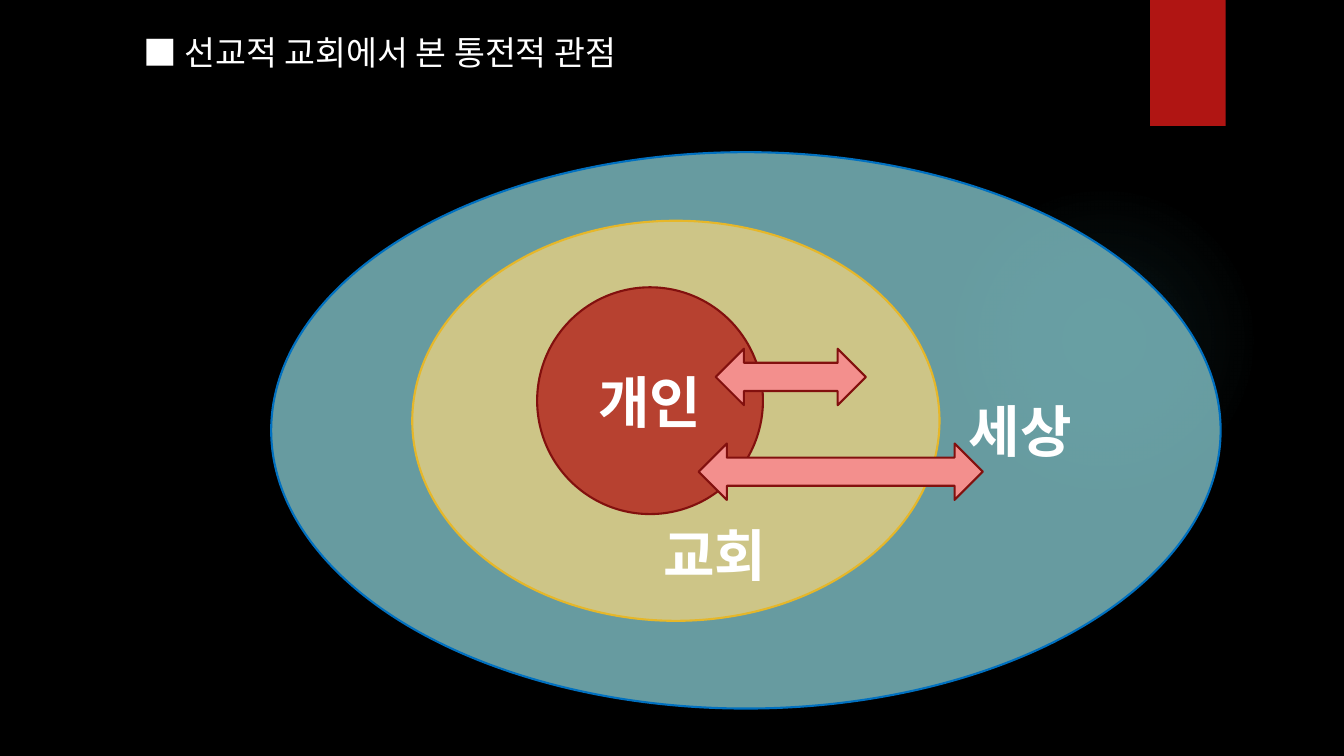
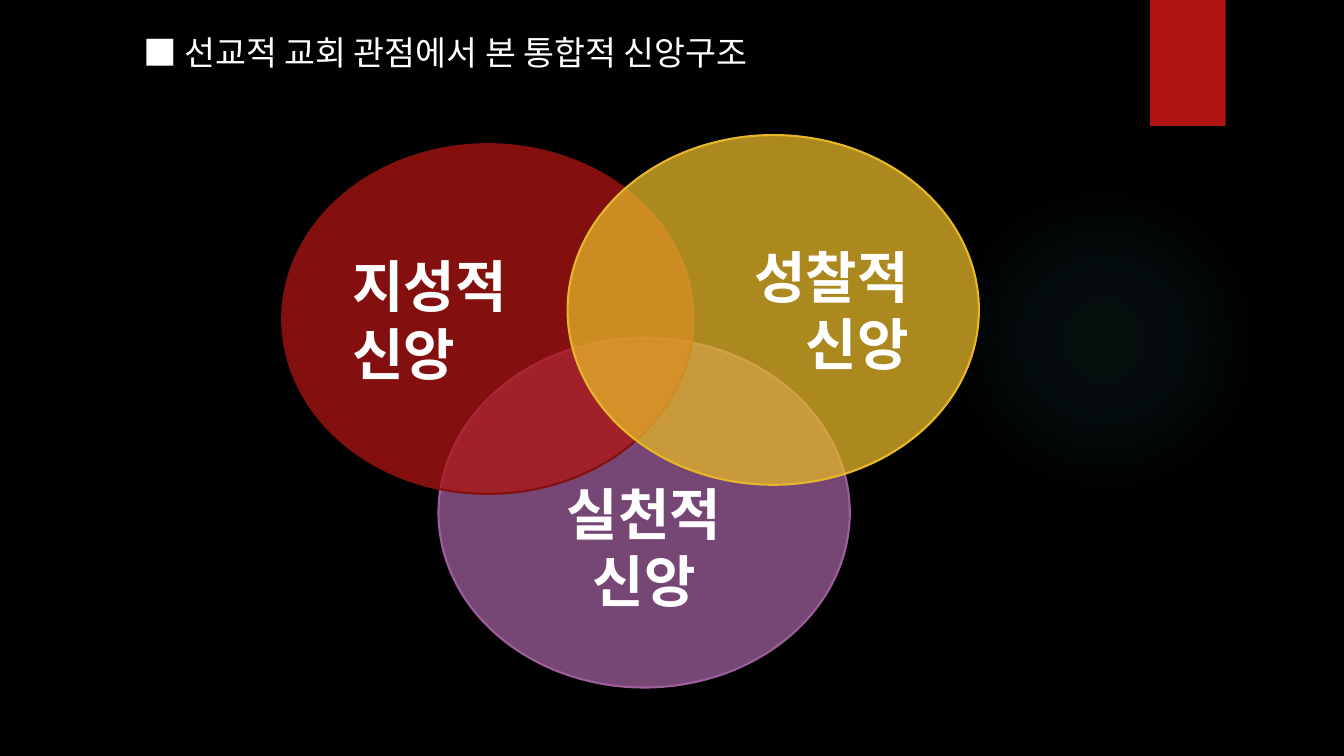
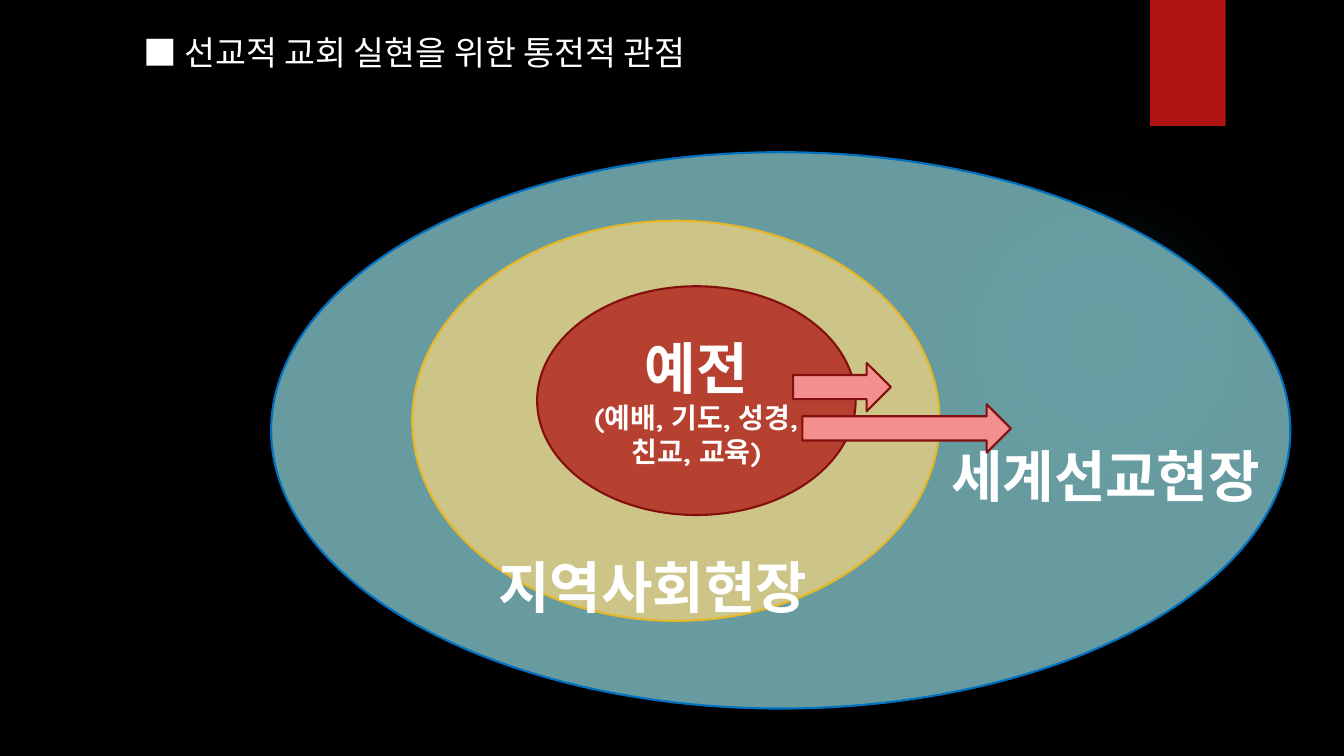
from pptx import Presentation
from pptx.dml.color import RGBColor
from pptx.enum.shapes import MSO_SHAPE as Shape
from pptx.enum.text import MSO_ANCHOR as Anchor, MSO_AUTO_SIZE as AutoSize, PP_ALIGN as Align
from pptx.oxml import parse_xml
from pptx.oxml.ns import nsdecls, qn
from pptx.util import Pt

COLORS = {
    "background": "000000", "text": "FFFFFF", "glow": "50B9C1",
    "red": "B01513", "dark_red": "82100E", "arrow": "F38F8D",
    "teal": "8AD0D6", "blue": "0070C0", "cream": "F0D47F",
    "gold": "E6B729", "purple": "9E5E9B",
}
FONT = "Quicksand"
LABEL_SIZE = 40
LINE_HEIGHT = 48
GLOW_STOPS = [(0, 7), (36, 6), (69, 0)]


def color(name):
    """Return the named colour."""
    return RGBColor.from_string(COLORS[name])


def write(frame, lines, align=Align.LEFT, bold=True):
    """Write (text, size) lines as the paragraphs of a text frame."""
    for index, (text, size) in enumerate(lines):
        paragraph = frame.add_paragraph() if index else frame.paragraphs[0]
        paragraph.alignment = align
        run = paragraph.add_run()
        run.text = text
        run.font.name = FONT
        run.font.size = Pt(size)
        run.font.bold = bold
        run.font.color.rgb = color("text")


def add_figure(slide, kind, box, fill, line=None, opacity=100):
    """Add a flat preset shape, optionally outlined and see-through."""
    shape = slide.shapes.add_shape(kind, *map(Pt, box))
    shape.shadow.inherit = False
    shape.fill.solid()
    shape.fill.fore_color.rgb = color(fill)
    if opacity < 100:
        solid = shape.element.spPr.find(qn("a:solidFill"))
        solid[0].append(parse_xml(f'<a:alpha {nsdecls("a")} val="{opacity * 1000}"/>'))
    if line:
        shape.line.color.rgb = color(line)
        shape.line.width = Pt(1.5)
    else:
        shape.line.fill.background()
    return shape


def add_ellipse(slide, box, fill, line, lines=(), align=Align.CENTER, drop=0):
    """Add a translucent ellipse whose text sits a given drop below its top inset."""
    shape = add_figure(slide, Shape.OVAL, box, fill, line, 75)
    frame = shape.text_frame
    frame.word_wrap = True
    frame.vertical_anchor = Anchor.MIDDLE
    frame.margin_top = Pt(3.6 + drop)
    write(frame, lines, align)


def add_label(slide, center, text):
    """Add a bold one-line label centred on a point."""
    width, height = LABEL_SIZE * len(text), LINE_HEIGHT
    box = center[0] - width / 2, center[1] - height / 2, width, height
    frame = slide.shapes.add_textbox(*map(Pt, box)).text_frame
    frame.word_wrap = False
    frame.vertical_anchor = Anchor.MIDDLE
    frame.margin_left = frame.margin_right = frame.margin_top = frame.margin_bottom = 0
    write(frame, [(text, LABEL_SIZE)], Align.CENTER)


def decorate_layout(layout, slide):
    """Draw the glow and the red tab and move them to the shared layout."""
    glow = add_figure(slide, Shape.OVAL, (677.5, 131.8, 221.8, 221.8), "glow")
    stops = "".join(
        f'<a:gs pos="{position * 1000}"><a:srgbClr val="{COLORS["glow"]}">'
        f'<a:alpha val="{opacity * 1000}"/></a:srgbClr></a:gs>'
        for position, opacity in GLOW_STOPS)
    gradient = parse_xml(
        f'<a:gradFill {nsdecls("a")}><a:gsLst>{stops}</a:gsLst><a:path path="circle">'
        '<a:fillToRect l="50000" t="50000" r="50000" b="50000"/></a:path></a:gradFill>')
    properties = glow.element.spPr
    properties.replace(properties.find(qn("a:solidFill")), gradient)
    tab = add_figure(slide, Shape.RECTANGLE, (821.5, 0, 54, 90), "red")
    for shape in (glow, tab):
        layout.shapes.element.append(shape.element)


def add_titled_slide(presentation, layout, title, width):
    """Add a slide with its heading in the title placeholder."""
    slide = presentation.slides.add_slide(layout)
    shape = slide.shapes.title
    shape.left, shape.top, shape.width, shape.height = map(Pt, (95, 19.4, width, 36))
    frame = shape.text_frame
    frame.auto_size = AutoSize.NONE
    frame.word_wrap = False
    frame.vertical_anchor = Anchor.TOP
    write(frame, [(title, 24)], bold=False)
    return slide


def add_nested_circles(slide, box, core_size, core_lines, arrow_kind, arrows, labels, world=()):
    """Draw world, community and core inside the box, with arrows leading outwards."""
    left, top = box[:2]

    def place(x, y, width, height):
        """Shift a rectangle into the box."""
        return left + x, top + y, width, height

    add_ellipse(slide, box, "teal", "blue", world, Align.RIGHT)
    add_ellipse(slide, place(100.8, 49, 376.6, 285.8), "cream", "gold")
    core_width, core_height = core_size
    core = place(190, 177.5 - core_height / 2, core_width, core_height)
    add_ellipse(slide, core, "red", "dark_red", core_lines)
    for x, y, text in labels:
        add_label(slide, (left + x, top + y), text)
    for arrow in arrows:
        add_figure(slide, arrow_kind, place(*arrow), "arrow", "dark_red")


def add_venn(slide, box):
    """Draw three overlapping kinds of faith inside the box."""
    left, top, width, height = box
    circle_width, circle_height = 293.8, 249.8
    circles = [
        (111.6, height - circle_height, "purple", "purple", "실천적", Align.CENTER, LINE_HEIGHT),
        (0, 6.5, "red", "dark_red", "지성적", Align.LEFT, 0),
        (width - circle_width, 0, "gold", "gold", "성찰적", Align.RIGHT, 0),
    ]
    for x, y, fill, line, kind, align, drop in circles:
        lines = [(kind, LABEL_SIZE), ("신앙", LABEL_SIZE)]
        circle = left + x, top + y, circle_width, circle_height
        add_ellipse(slide, circle, fill, line, lines, align, drop)


def main():
    """Build and save the three slides."""
    presentation = Presentation()
    presentation.slide_width, presentation.slide_height = Pt(960), Pt(540)
    background = presentation.slide_master.background.fill
    background.solid()
    background.fore_color.rgb = color("background")
    layout = presentation.slide_layouts[5]

    slide = add_titled_slide(presentation, layout, "■ 선교적 교회에서 본 통전적 관점", 387.4)
    decorate_layout(layout, slide)
    add_nested_circles(
        slide, (193.7, 108.7, 678.2, 397.4), (161.3, 162), [("개인", LABEL_SIZE)],
        Shape.LEFT_RIGHT_ARROW,
        [(317.5, 140.4, 107.3, 40.3), (305.3, 208.1, 203, 40.3)],
        [(317, 287, "교회")], [("세상", LABEL_SIZE)])

    slide = add_titled_slide(presentation, layout, "■ 선교적 교회 관점에서 본 통합적 신앙구조", 491)
    add_venn(slide, (201.6, 96.5, 497.6, 394.6))

    slide = add_titled_slide(presentation, layout, "■ 선교적 교회 실현을 위한 통전적 관점", 442)
    add_nested_circles(
        slide, (193.7, 108.7, 728, 397.4), (227.5, 163.4),
        [("예전", LABEL_SIZE), ("(예배, 기도, 성경, 친교, 교육)", 20)],
        Shape.RIGHT_ARROW,
        [(372.9, 150.5, 69.8, 34.6), (379.4, 180, 149, 34.6)],
        [(272.7, 310, "지역사회현장"), (596, 231, "세계선교현장")])

    presentation.save("out.pptx")


if __name__ == "__main__":
    main()
